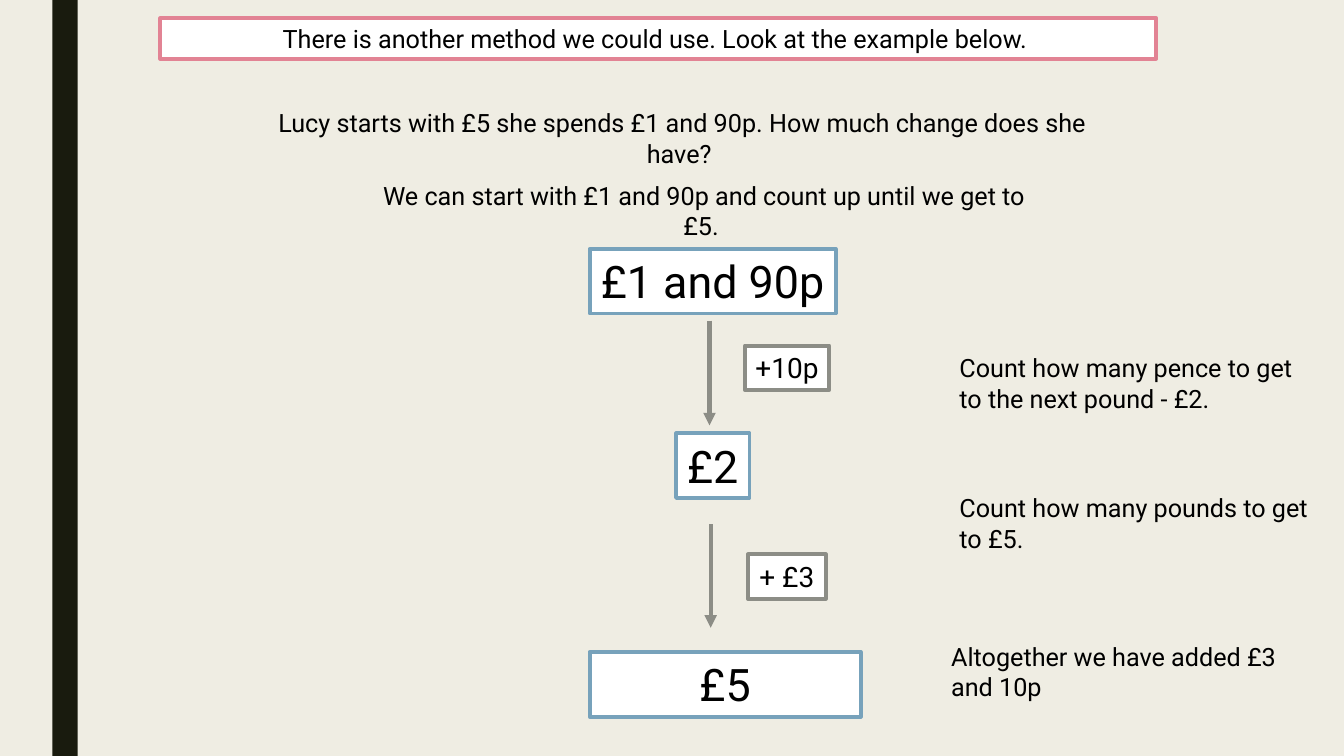
from dataclasses import dataclass

from lxml import etree
from pptx import Presentation
from pptx import util as u
from pptx.dml.color import RGBColor
from pptx.enum import shapes, text
from pptx.oxml import ns
from pptx.slide import Slide

BACKGROUND = RGBColor(0xEF, 0xED, 0xE3)
DARK = RGBColor(0x19, 0x1B, 0x0E)
WHITE = RGBColor(0xFF, 0xFF, 0xFF)
BLACK = RGBColor(0x00, 0x00, 0x00)
PINK = RGBColor(0xE2, 0x83, 0x94)
BLUE = RGBColor(0x77, 0xA2, 0xBB)
GREY = RGBColor(0x8C, 0x8D, 0x86)

FONT = "Roboto"
BAND_HEIGHT = 1.02
AMOUNT_HEIGHT = 1.63
STEP_HEIGHT = 1.12
NOTE_HEIGHT = 1.8
CENTER = text.PP_ALIGN.CENTER
LEFT = text.PP_ALIGN.LEFT


@dataclass(frozen=True)
class Box:
    """A framed value or sentence; lengths are in centimetres."""
    words: str
    left: float
    top: float
    width: float
    height: float
    outline: RGBColor
    size: int
    wrap: bool = False


@dataclass(frozen=True)
class Passage:
    """Unframed text; lengths are in centimetres."""
    words: str
    left: float
    top: float
    width: float
    height: float = NOTE_HEIGHT
    align: text.PP_ALIGN = LEFT


@dataclass(frozen=True)
class Arrow:
    x: float
    top: float
    bottom: float


BOXES = [
    Box("There is another method we could use. Look at the example below. ",
        4.04, 0.46, 25.1, BAND_HEIGHT, PINK, 18, wrap=True),
    Box("£1 and 90p", 14.86, 6.27, 6.2, AMOUNT_HEIGHT, BLUE, 32),
    Box("+10p", 18.77, 8.71, 2.13, STEP_HEIGHT, GREY, 20),
    Box("£2", 17.04, 10.92, 1.85, AMOUNT_HEIGHT, BLUE, 32),
    Box("+ £3", 18.85, 13.97, 1.96, STEP_HEIGHT, GREY, 20),
    Box("£5", 14.86, 16.43, 6.83, AMOUNT_HEIGHT, BLUE, 32, wrap=True),
]

PASSAGES = [
    Passage("Lucy starts with £5 she spends £1 and 90p. How much change does she have? ",
            6.22, 2.59, 21.95, BAND_HEIGHT, CENTER),
    Passage("We can start with £1 and 90p and count up until we get to £5. ",
            9.02, 4.42, 17.45, BAND_HEIGHT, CENTER),
    Passage("Count how many pence to get to the next pound - £2.", 23.93, 8.76, 9.35),
    Passage("Count how many pounds to get to £5.", 23.93, 12.29, 9.35),
    Passage("Altogether we have added £3 and 10p", 23.72, 16.03, 9.55),
]

ARROWS = [Arrow(17.88, 8.08, 10.72), Arrow(17.91, 13.21, 15.82)]


def write_text(shape, words: str, *, size: int = 18, align: text.PP_ALIGN = CENTER,
               wrap: bool = True) -> None:
    frame = shape.text_frame
    frame.word_wrap = wrap
    frame.vertical_anchor = text.MSO_ANCHOR.TOP
    paragraph = frame.paragraphs[0]
    paragraph.alignment = align
    run = paragraph.add_run()
    run.text = words
    run.font.name = FONT
    run.font.size = u.Pt(size)
    run.font.color.rgb = BLACK


def add_rectangle(slide: Slide, left: float, top: float, width: float, height: float,
                  fill: RGBColor):
    shape = slide.shapes.add_shape(shapes.MSO_SHAPE.RECTANGLE, u.Cm(left), u.Cm(top),
                                   u.Cm(width), u.Cm(height))
    shape.shadow.inherit = False
    shape.fill.solid()
    shape.fill.fore_color.rgb = fill
    shape.line.fill.background()
    return shape


def add_box(slide: Slide, box: Box) -> None:
    shape = add_rectangle(slide, box.left, box.top, box.width, box.height, WHITE)
    shape.line.color.rgb = box.outline
    shape.line.width = u.Pt(2.75)
    write_text(shape, box.words, size=box.size, wrap=box.wrap)


def add_passage(slide: Slide, passage: Passage) -> None:
    shape = slide.shapes.add_textbox(u.Cm(passage.left), u.Cm(passage.top),
                                     u.Cm(passage.width), u.Cm(passage.height))
    write_text(shape, passage.words, align=passage.align)


def add_arrow(slide: Slide, arrow: Arrow) -> None:
    connector = slide.shapes.add_connector(
        shapes.MSO_CONNECTOR.STRAIGHT, u.Cm(arrow.x), u.Cm(arrow.top),
        u.Cm(arrow.x), u.Cm(arrow.bottom))
    connector.line.color.rgb = GREY
    connector.line.width = u.Pt(3)
    line = connector.line._get_or_add_ln()
    etree.SubElement(line, ns.qn("a:tailEnd"), type="triangle")
    etree.SubElement(connector._element.spPr, ns.qn("a:effectLst"))


def main() -> None:
    presentation = Presentation()
    presentation.slide_width = u.Cm(33.87)
    presentation.slide_height = u.Cm(19.05)
    slide = presentation.slides.add_slide(presentation.slide_layouts[6])
    slide.background.fill.solid()
    slide.background.fill.fore_color.rgb = BACKGROUND

    add_rectangle(slide, 1.32, 0, 0.64, 19.05, DARK)
    for box in BOXES:
        add_box(slide, box)
    for passage in PASSAGES:
        add_passage(slide, passage)
    for arrow in ARROWS:
        add_arrow(slide, arrow)
    presentation.save("out.pptx")


if __name__ == "__main__":
    main()
